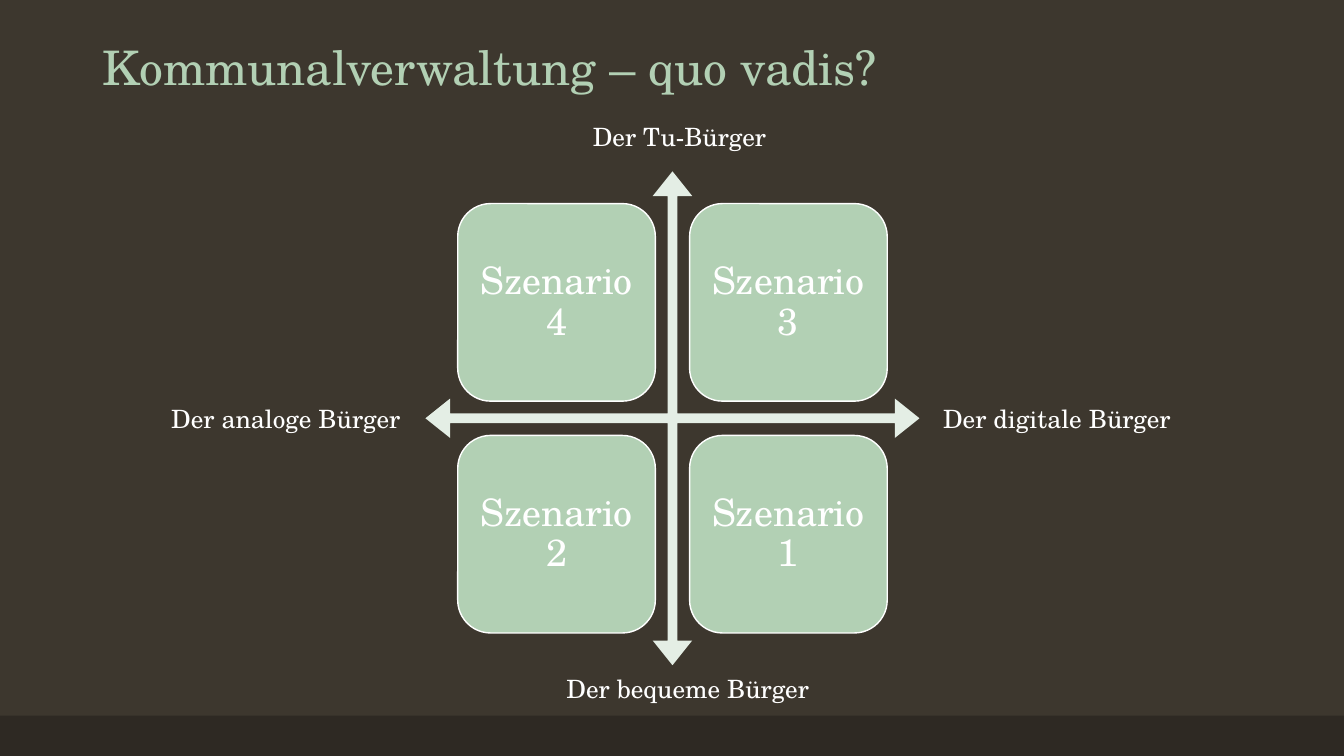
from dataclasses import dataclass

from pptx import Presentation
from pptx.dml.color import RGBColor
from pptx.enum.shapes import MSO_SHAPE
from pptx.enum.text import MSO_ANCHOR, PP_ALIGN
from pptx.util import Inches, Pt

RECTANGLE = MSO_SHAPE.RECTANGLE
ROUNDED = MSO_SHAPE.ROUNDED_RECTANGLE
QUAD_ARROW = MSO_SHAPE.QUAD_ARROW
LEFT, CENTER, RIGHT = PP_ALIGN.LEFT, PP_ALIGN.CENTER, PP_ALIGN.RIGHT
TOP, MIDDLE, BOTTOM = MSO_ANCHOR.TOP, MSO_ANCHOR.MIDDLE, MSO_ANCHOR.BOTTOM


@dataclass(frozen=True)
class Theme:
    font: str = "TeX Gyre Schola"
    background: str = "3D372E"
    footer: str = "2E2923"
    accent: str = "B2D0B4"
    arrow: str = "E4EEE5"
    text: str = "FFFFFF"
    title_size: int = 34
    tile_size: int = 27
    label_size: int = 18


THEME = Theme()


def write_text(shape, text, size=THEME.label_size, color=THEME.text, align=LEFT,
               anchor=TOP, spacing=1.0, inset=None):
    frame = shape.text_frame
    frame.word_wrap = True
    frame.vertical_anchor = anchor
    if inset is not None:
        frame.margin_left = frame.margin_right = Inches(inset)
        frame.margin_top = frame.margin_bottom = Inches(inset)
    para = frame.paragraphs[0]
    para.alignment = align
    para.line_spacing = spacing
    span = para.add_run()
    span.text = text
    span.font.name = THEME.font
    span.font.size = Pt(size)
    span.font.color.rgb = RGBColor.from_string(color)


def add_text(page, box, text, **text_format):
    shape = page.shapes.add_textbox(*map(Inches, box))
    write_text(shape, text, **text_format)


def add_panel(page, kind, box, fill, line=None):
    shape = page.shapes.add_shape(kind, *map(Inches, box))
    shape.shadow.inherit = False
    shape.fill.solid()
    shape.fill.fore_color.rgb = RGBColor.from_string(fill)
    if line:
        shape.line.color.rgb = RGBColor.from_string(line)
        shape.line.width = Pt(1)
    else:
        shape.line.fill.background()
    return shape


def add_frame(page, box):
    left, top, width, height = box
    page.background.fill.solid()
    page.background.fill.fore_color.rgb = RGBColor.from_string(THEME.background)
    footer_height = 0.4
    footer_box = (left, top + height - footer_height, width, footer_height)
    add_panel(page, RECTANGLE, footer_box, THEME.footer)


def add_title(page, box, text):
    add_text(page, box, text, size=THEME.title_size, color=THEME.accent,
             anchor=BOTTOM, spacing=0.9)


def add_matrix(page, box, rows):
    left, top, side, _ = box
    arrow = add_panel(page, QUAD_ARROW, box, THEME.arrow)
    for index, value in enumerate((0.02, 0.04, 0.05)):
        arrow.adjustments[index] = value
    tile, margin = 1.96, 0.32
    pitch = side - 2 * margin - tile
    for row, names in enumerate(rows):
        for column, name in enumerate(names):
            tile_box = (left + margin + column * pitch,
                        top + margin + row * pitch, tile, tile)
            shape = add_panel(page, ROUNDED, tile_box, THEME.accent, THEME.text)
            write_text(shape, name, size=THEME.tile_size, align=CENTER,
                       anchor=MIDDLE, spacing=0.9, inset=0.11)


def add_axis_labels(page, box):
    left, top, side, _ = box
    width, height = 2.84, 0.4
    middle = top + side / 2 - height / 2
    labels = (
        ("Der Tu-Bürger", left + 1.3, top - 0.55, 2.44, CENTER),
        ("Der bequeme Bürger", left + 1.3, top + side + 0.03, width, LEFT),
        ("Der analoge Bürger", left - 0.15 - width, middle, width, RIGHT),
        ("Der digitale Bürger", left + side - 0.25, middle, width, RIGHT),
    )
    for text, label_left, label_top, label_width, align in labels:
        add_text(page, (label_left, label_top, label_width, height), text, align=align)


def main():
    deck = Presentation()
    deck.slide_width, deck.slide_height = Inches(13.33), Inches(7.5)
    page = deck.slides.add_slide(deck.slide_layouts[6])
    add_frame(page, (0, 0, 13.33, 7.5))
    add_title(page, (0.92, 0, 11.5, 1), "Kommunalverwaltung – quo vadis?")
    matrix_box = (4.22, 1.7, 4.9, 4.9)
    add_matrix(page, matrix_box, (("Szenario 4", "Szenario 3"),
                                  ("Szenario 2", "Szenario 1")))
    add_axis_labels(page, matrix_box)
    deck.save("out.pptx")


if __name__ == "__main__":
    main()
